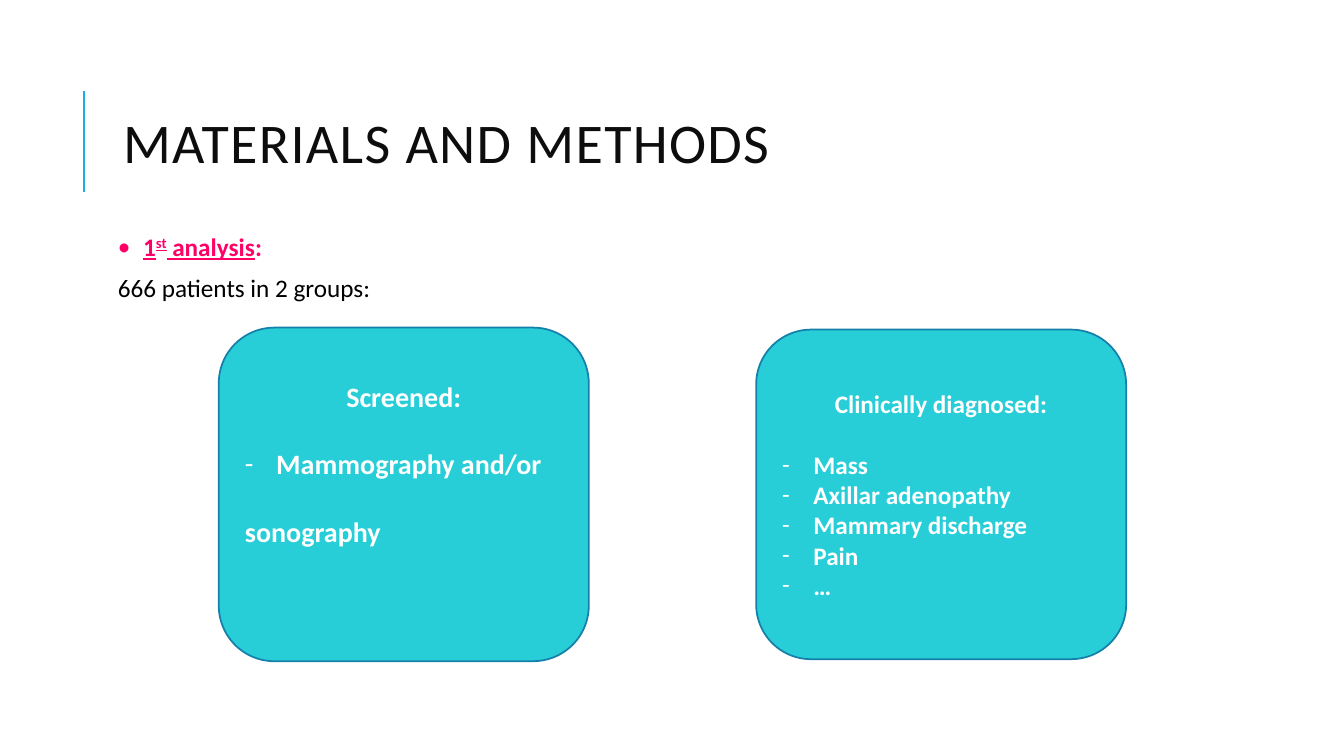
"""Build the Materials and Methods slide with its two patient groups."""
from lxml import etree
from pptx import Presentation
from pptx.dml.color import RGBColor
from pptx.enum.shapes import MSO_CONNECTOR, MSO_SHAPE
from pptx.enum.text import MSO_ANCHOR, MSO_AUTO_SIZE, PP_ALIGN
from pptx.oxml.ns import qn
from pptx.util import Inches, Pt

STRAIGHT = MSO_CONNECTOR.STRAIGHT
ROUNDED = MSO_SHAPE.ROUNDED_RECTANGLE
MIDDLE, TOP = MSO_ANCHOR.MIDDLE, MSO_ANCHOR.TOP
LEFT, CENTER = PP_ALIGN.LEFT, PP_ALIGN.CENTER
NO_FIT = MSO_AUTO_SIZE.NONE
FONT = "Calibri"
COLORS = {"rule": "1CADE4", "title": "0D0D0D", "accent": "FF0066", "text": "000000",
          "box": "27CED7", "edge": "1580A9", "white": "FFFFFF"}
MARGIN, CONTENT_WIDTH = Inches(1.12), Inches(10.63)


def add_span(para, text, size, color, bold=False, underline=False, **attributes):
    span = para.add_run()
    span.text = text
    span.font.name, span.font.size = FONT, Pt(size)
    span.font.bold, span.font.underline = bold, underline
    span.font.color.rgb = RGBColor.from_string(COLORS[color])
    for name, value in attributes.items():
        span._r.get_or_add_rPr().set(name, value)


def add_bullet(para, mark, indent):
    properties = para._p.get_or_add_pPr()
    properties.set("marL", str(Inches(indent)))
    properties.set("indent", str(-Inches(indent)))
    etree.SubElement(properties, qn("a:buFont")).set("typeface", FONT)
    etree.SubElement(properties, qn("a:buChar")).set("char", mark)


deck = Presentation()
deck.slide_width, deck.slide_height = Inches(13.33), Inches(7.5)
page = deck.slides.add_slide(deck.slide_layouts[5])

rule = page.shapes.add_connector(STRAIGHT, Inches(0.83), Inches(1.9), Inches(0.83), Inches(0.9))
rule.line.color.rgb = RGBColor.from_string(COLORS["rule"])
rule.line.width = Pt(1.5)
etree.SubElement(rule._element.spPr, qn("a:effectLst"))

title = page.shapes.title
title.left, title.top, title.width, title.height = MARGIN, Inches(0.64), CONTENT_WIDTH, Inches(1.64)
title.text_frame.vertical_anchor = MIDDLE
title.text_frame.auto_size = NO_FIT
para = title.text_frame.paragraphs[0]
para.alignment, para.line_spacing = LEFT, 0.8
add_span(para, "MATERIALS AND METHODS", 40, "title", spc="100")

intro = page.shapes.add_textbox(MARGIN, Inches(2.28), CONTENT_WIDTH, Inches(0.9))
frame = intro.text_frame
frame.word_wrap, frame.vertical_anchor = True, TOP
frame.margin_left = frame.margin_right = frame.margin_top = frame.margin_bottom = Inches(0.05)
heading, summary = frame.paragraphs[0], frame.add_paragraph()
for para in (heading, summary):
    para.line_spacing, para.space_before = 0.9, Pt(10)
add_bullet(heading, "•", 0.25)
add_span(heading, "1", 18, "accent", True, True)
add_span(heading, "st", 18, "accent", True, True, baseline="30000")
add_span(heading, " analysis", 18, "accent", True, True)
add_span(heading, ":", 18, "accent", True)
add_span(summary, "666 patients in 2 groups:", 18, "text")

GROUPS = [
    {"left": 7.5, "top": 3.27, "height": 3.27, "size": 18, "bottom": 0.05,
     "lines": [("Clinically diagnosed:", "heading", 0), ("Mass", "bullet", 22),
               ("Axillar adenopathy", "bullet", 0), ("Mammary discharge", "bullet", 0),
               ("Pain", "bullet", 0), ("…", "bullet", 0)]},
    {"left": 2.17, "top": 3.25, "height": 3.31, "size": 20, "bottom": 0.66,
     "lines": [("Screened:", "heading", 0), ("Mammography and/or", "bullet", 24),
               ("sonography", "plain", 24)]},
]
for group in GROUPS:
    box = page.shapes.add_shape(ROUNDED, Inches(group["left"]), Inches(group["top"]),
                                Inches(3.67), Inches(group["height"]))
    box.shadow.inherit = False
    box.fill.solid()
    box.fill.fore_color.rgb = RGBColor.from_string(COLORS["box"])
    box.line.color.rgb = RGBColor.from_string(COLORS["edge"])
    box.line.width = Pt(1.25)
    frame = box.text_frame
    frame.word_wrap, frame.vertical_anchor = True, MIDDLE
    frame.margin_bottom = Inches(group["bottom"])
    for number, (text, style, gap) in enumerate(group["lines"]):
        para = frame.add_paragraph() if number else frame.paragraphs[0]
        para.alignment = CENTER if style == "heading" else LEFT
        para.space_before = Pt(gap)
        if style == "bullet":
            add_bullet(para, "-", 0.31)
        add_span(para, text, group["size"], "white", True)

deck.save("out.pptx")
